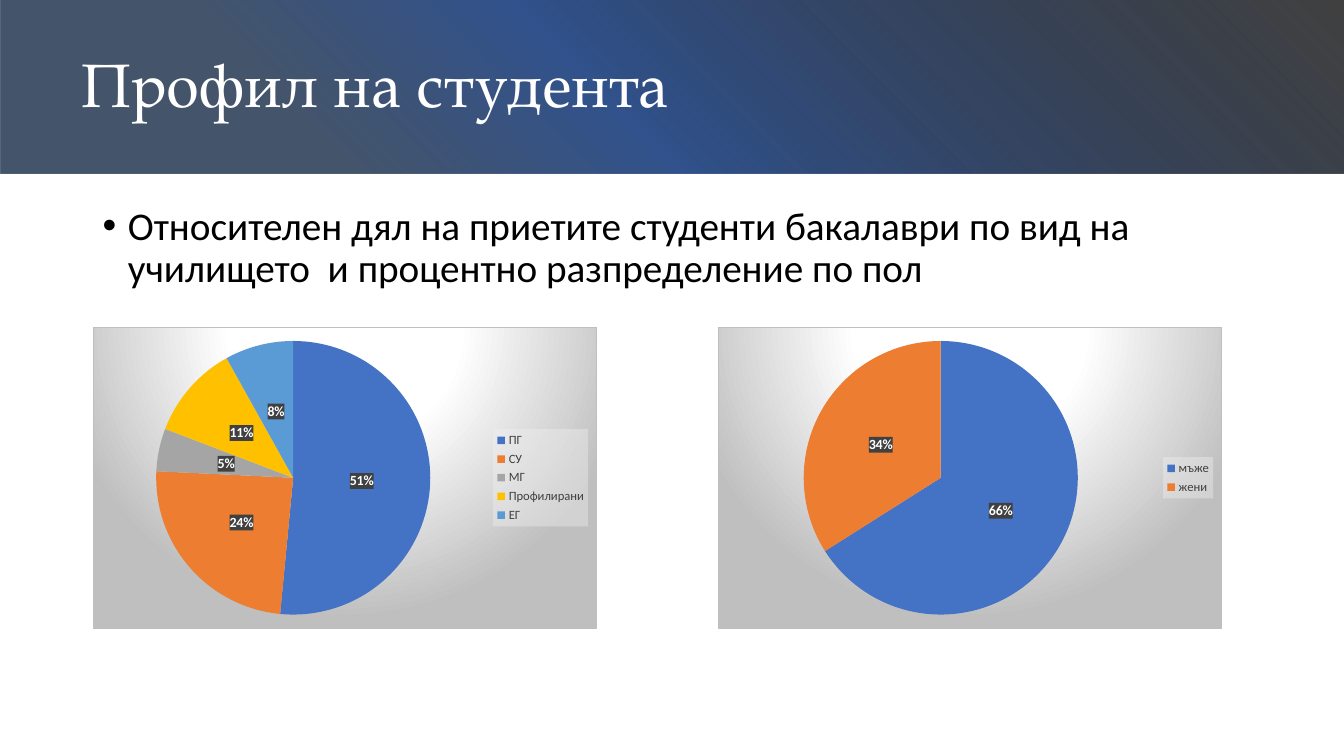
import pptx
import pptx.chart.data
import pptx.dml.color
import pptx.enum.chart
import pptx.enum.shapes
import pptx.enum.text
import pptx.oxml
import pptx.oxml.ns
import pptx.util

Inches = pptx.util.Inches
Pt = pptx.util.Pt
qn = pptx.oxml.ns.qn
FONT = "Calibri"
COLORS = ["4472C4", "ED7D31", "A5A5A5", "FFC000", "5B9BD5"]


def rgb(code):
    return pptx.dml.color.RGBColor.from_string(code)


def style(font, size, color, name=FONT):
    font.size = Pt(size)
    font.name = name
    font.color.rgb = rgb(color)


def solid(color, alpha):
    return (f'<a:solidFill><a:srgbClr val="{color}">'
            f'<a:alpha val="{alpha * 1000}"/></a:srgbClr></a:solidFill>')


def gradient(stops, shade):
    """Gradient XML from (position, colour, opacity) stops, in percent."""
    marks = "".join(
        f'<a:gs pos="{pos * 1000}"><a:srgbClr val="{color}">'
        f'<a:alpha val="{alpha * 1000}"/></a:srgbClr></a:gs>'
        for pos, color, alpha in stops)
    return (f'<a:gradFill {pptx.oxml.ns.nsdecls("a")} rotWithShape="1">'
            f'<a:gsLst>{marks}</a:gsLst>{shade}</a:gradFill>')


def paint(part, fill):
    """Give a chart part, whose font is already set, its fill and line."""
    part.find(qn("c:txPr")).addprevious(pptx.oxml.parse_xml(
        f'<c:spPr {pptx.oxml.ns.nsdecls("c", "a")}>{fill}</c:spPr>'))


def add_banner(slide, left, top, width, height):
    # The bar stands upright and is turned, so its gradient turns with it.
    bar = slide.shapes.add_shape(
        pptx.enum.shapes.MSO_SHAPE.RECTANGLE,
        Inches(left + (width - height) / 2), Inches(top + (height - width) / 2),
        Inches(height), Inches(width))
    bar.rotation = 90
    bar.shadow.inherit = False
    bar.line.fill.background()
    fill = gradient([(23, "44546A", 100), (45, "31528C", 100), (99, "000000", 74)],
                    f'<a:lin ang="{225 * 60000}" scaled="0"/>')
    bar._element.spPr.find(qn("a:prstGeom")).addnext(pptx.oxml.parse_xml(fill))
    slide.shapes._spTree.insert(2, bar._element)

    title = slide.shapes.title
    title.left, title.top = Inches(left + 0.71), Inches(top + 0.14)
    title.width, title.height = Inches(11.5), Inches(1.45)
    frame = title.text_frame
    frame.text = "Профил на студента"
    frame.auto_size = pptx.enum.text.MSO_AUTO_SIZE.NONE
    frame.vertical_anchor = pptx.enum.text.MSO_ANCHOR.MIDDLE
    para = frame.paragraphs[0]
    para.alignment = pptx.enum.text.PP_ALIGN.LEFT
    para.line_spacing = 0.9
    style(para.font, 44, "FFFFFF", "TeX Gyre Pagella")


def add_body(slide, left, top, width, height):
    box = slide.shapes.add_textbox(
        Inches(left), Inches(top), Inches(width), Inches(height))
    frame = box.text_frame
    frame.word_wrap = True
    para = frame.paragraphs[0]
    para.text = ("Относителен дял на приетите студенти бакалаври по вид на "
                 "училището  и процентно разпределение по пол")
    props = para._p.get_or_add_pPr()
    props.set("marL", str(Inches(0.25)))
    props.set("indent", str(-Inches(0.25)))
    ns = pptx.oxml.ns.nsdecls("a")
    props.append(pptx.oxml.parse_xml(f'<a:buFont {ns} typeface="Arial"/>'))
    props.append(pptx.oxml.parse_xml(f'<a:buChar {ns} char="•"/>'))
    para.line_spacing = 0.9
    style(para.font, 28, "000000")


def add_pie(slide, left, top, width, height, shares):
    data = pptx.chart.data.CategoryChartData(number_format='0"%"')
    data.categories = list(shares)
    data.add_series("Series 1", list(shares.values()))
    chart = slide.shapes.add_chart(
        pptx.enum.chart.XL_CHART_TYPE.PIE, Inches(left), Inches(top),
        Inches(width), Inches(height), data).chart
    chart.has_title = False
    style(chart.font, 10, "000000")
    glow = gradient(
        [(0, "FFFFFF", 100), (39, "FFFFFF", 100), (100, "BFBFBF", 100)],
        '<a:path path="circle"><a:fillToRect l="50000" t="-80000" '
        'r="50000" b="180000"/></a:path>')
    paint(chart._chartSpace,
          f'{glow}<a:ln w="{Pt(0.75)}">{solid("BFBFBF", 100)}</a:ln>')

    chart.has_legend = True
    legend = chart.legend
    legend.position = pptx.enum.chart.XL_LEGEND_POSITION.RIGHT
    legend.include_in_layout = False
    style(legend.font, 9, "404040")
    paint(legend._element, solid("F2F2F2", 39))

    plot = chart.plots[0]
    plot.vary_by_categories = True
    for index in range(len(shares)):
        point = plot.series[0].points[index]
        point.format.fill.solid()
        point.format.fill.fore_color.rgb = rgb(COLORS[index])
        point.format.line.fill.background()

    labels = plot.series[0].data_labels
    labels.show_value = True
    labels.number_format = '0"%"'
    labels.number_format_is_linked = False
    labels.position = pptx.enum.chart.XL_LABEL_POSITION.CENTER
    style(labels.font, 10, "FFFFFF")
    labels.font.bold = True
    paint(labels._element, solid("404040", 95))


def main():
    deck = pptx.Presentation()
    deck.slide_width, deck.slide_height = Inches(13.33), Inches(7.5)
    slide = deck.slides.add_slide(deck.slide_layouts.get_by_name("Title Only"))
    add_banner(slide, 0, 0, 13.33, 1.72)
    add_body(slide, 0.92, 2, 11.5, 1.1)
    schools = {"ПГ": 51, "СУ": 24, "МГ": 5, "Профилирани": 11, "ЕГ": 8}
    genders = {"мъже": 66, "жени": 34}
    for col, shares in enumerate([schools, genders]):
        add_pie(slide, 0.92 + 6.2 * col, 3.24, 5, 3, shares)
    deck.save("out.pptx")


if __name__ == "__main__":
    main()
